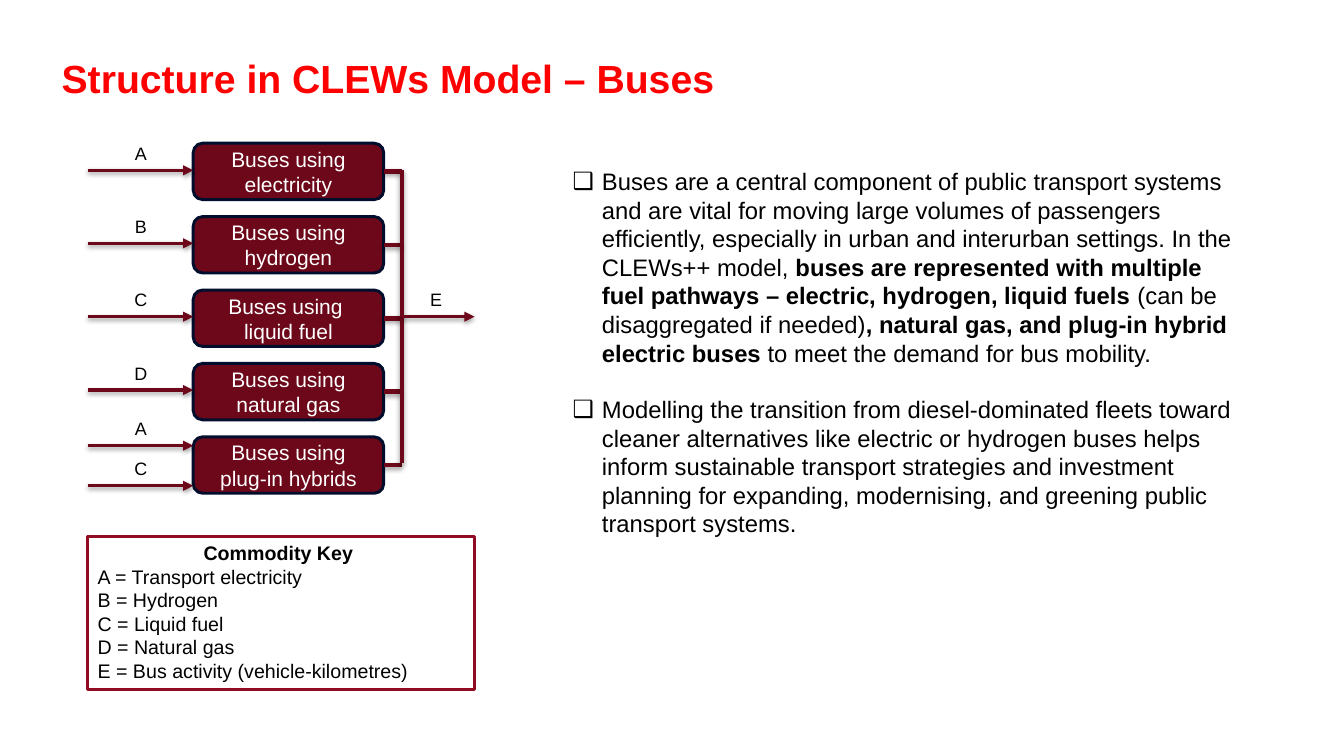
from dataclasses import dataclass

from lxml.etree import SubElement
from pptx import Presentation
from pptx.dml.color import RGBColor as Rgb
from pptx.enum.shapes import MSO_CONNECTOR as Link, MSO_SHAPE as Shape
from pptx.enum.text import MSO_ANCHOR as Anchor, MSO_AUTO_SIZE as Fit, PP_ALIGN as Align
from pptx.oxml import parse_xml
from pptx.oxml.ns import nsdecls, qn
from pptx.util import Cm, Pt


@dataclass(frozen=True)
class Theme:
    font: str = "Arial"
    red: Rgb = Rgb(0xFF, 0, 0)
    maroon: Rgb = Rgb(0x6C, 0x08, 0x19)
    crimson: Rgb = Rgb(0x91, 0x0C, 0x22)
    navy: Rgb = Rgb(0, 0x0D, 0x2C)
    black: Rgb = Rgb(0, 0, 0)
    white: Rgb = Rgb(0xFF, 0xFF, 0xFF)
    title: Pt = Pt(28)
    body: Pt = Pt(17)
    box: Pt = Pt(15)
    key: Pt = Pt(14)
    label: Pt = Pt(12.8)
    flow: Pt = Pt(2.41)
    bus_bar: Pt = Pt(3.21)


theme = Theme()


def write(paragraph, runs, size, color, align=Align.LEFT):
    paragraph.alignment = align
    for words, bold in runs:
        if words == "\n":
            paragraph.add_line_break()
            continue
        run = paragraph.add_run()
        run.text = words
        looks = {"name": theme.font, "size": size, "bold": bold}
        for attribute, value in looks.items():
            setattr(run.font, attribute, value)
        run.font.color.rgb = color


def draw_line(x1, y1, x2, y2, width, arrow=False):
    line = slide.shapes.add_connector(Link.STRAIGHT, Cm(x1), Cm(y1), Cm(x2), Cm(y2))
    line.line.color.rgb = theme.maroon
    line.line.width = width
    properties = line._element.spPr
    if arrow:
        SubElement(properties.find(qn("a:ln")), qn("a:tailEnd"), type="triangle")
    properties.append(parse_xml(
        f'<a:effectLst {nsdecls("a")}><a:outerShdw blurRad="43180" dist="21590" dir="5400000" '
        'rotWithShape="0"><a:srgbClr val="000000"><a:alpha val="37000"/></a:srgbClr>'
        '</a:outerShdw></a:effectLst>'))


deck = Presentation()
deck.slide_width, deck.slide_height = Cm(33.87), Cm(19.05)
slide = deck.slides.add_slide(deck.slide_layouts[5])

title = slide.shapes.title
title_place = {"left": Cm(1.3), "top": Cm(0.79), "width": Cm(32.26), "height": Cm(1.9)}
for attribute, value in title_place.items():
    setattr(title, attribute, value)
title_format = {"vertical_anchor": Anchor.BOTTOM, "word_wrap": True, "auto_size": Fit.NONE}
for attribute, value in title_format.items():
    setattr(title.text_frame, attribute, value)
heading = title.text_frame.paragraphs[0]
heading.line_spacing = 0.9
write(heading, [("Structure in CLEWs Model – Buses", True)], theme.title, theme.red)

points = [
    [("Buses are a central component of public transport systems and are vital for moving large "
      "volumes of passengers efficiently, especially in urban and interurban settings. In the "
      "CLEWs++ model, ", False),
     ("buses are represented with multiple fuel pathways – electric, hydrogen, liquid fuels ", True),
     ("(can be disaggregated if needed)", False),
     (", natural gas, and plug-in hybrid electric buses", True),
     (" to meet the demand for bus mobility.", False)],
    [("Modelling the transition from diesel-dominated fleets toward cleaner alternatives like "
      "electric or hydrogen buses helps inform sustainable transport strategies and investment "
      "planning for expanding, modernising, and greening public transport systems.", False)],
]
explanation = slide.shapes.add_textbox(Cm(14.18), Cm(4.08), Cm(17.27), Cm(9.7)).text_frame
explanation.word_wrap = True
explanation.auto_size = Fit.SHAPE_TO_FIT_TEXT
for number, point in enumerate(points):
    paragraph = explanation.add_paragraph() if number else explanation.paragraphs[0]
    layout = paragraph._p.get_or_add_pPr()
    layout.set("marL", str(Cm(0.74)))
    layout.set("indent", str(-Cm(0.74)))
    bullet_color = SubElement(layout, qn("a:buClr"))
    SubElement(bullet_color, qn("a:srgbClr"), val=str(theme.black))
    SubElement(layout, qn("a:buFont"), typeface=theme.font)
    SubElement(layout, qn("a:buChar"), char="❑")
    if number:
        paragraph.space_before = Pt(20)
    write(paragraph, point, theme.body, theme.black)

inlet, box_left, box_width, box_height = 2.21, 4.87, 4.8, 1.42
first_top, pitch = 3.61, 1.85
bar_x, outlet = 10.13, 11.96

fuels = ["electricity", "hydrogen", "liquid fuel", "natural gas", "plug-in hybrids"]
for row, fuel in enumerate(fuels):
    top = first_top + row * pitch
    box = slide.shapes.add_shape(
        Shape.ROUNDED_RECTANGLE, Cm(box_left), Cm(top), Cm(box_width), Cm(box_height))
    box.shadow.inherit = False
    box.fill.solid()
    box.fill.fore_color.rgb = theme.maroon
    box.line.color.rgb = theme.navy
    box.line.width = Pt(2.14)
    box.text_frame.word_wrap = True
    box.text_frame.vertical_anchor = Anchor.MIDDLE
    if fuel == "liquid fuel":
        caption = [("Buses using ", False), ("\n", False), (fuel, False)]
    else:
        caption = [(f"Buses using {fuel}", False)]
    write(box.text_frame.paragraphs[0], caption, theme.box, theme.white, Align.CENTER)
    center = top + box_height / 2
    draw_line(bar_x, center, box_left + box_width, center, theme.bus_bar)

draw_line(bar_x, 4.29, bar_x, 11.66, theme.bus_bar)

inputs = [(letter, inlet, y, box_left, 2.57) for letter, y in
          [("A", 4.29), ("B", 6.13), ("C", 7.98), ("D", 9.83), ("A", 11.23), ("C", 12.24)]]
for letter, start, y, end, label_left in inputs + [("E", bar_x, 7.98, outlet, 10.01)]:
    draw_line(start, y, end, y, theme.flow, arrow=True)
    label = slide.shapes.add_textbox(Cm(label_left), Cm(y - 0.83), Cm(1.96), Cm(0.81)).text_frame
    label.word_wrap = True
    label.auto_size = Fit.SHAPE_TO_FIT_TEXT
    write(label.paragraphs[0], [(letter, False)], theme.label, theme.black, Align.CENTER)

key = slide.shapes.add_shape(Shape.RECTANGLE, Cm(inlet), Cm(13.51), Cm(outlet - inlet), Cm(3.86))
key.shadow.inherit = False
key.fill.background()
key.line.color.rgb = theme.crimson
key.line.width = Pt(2.25)
key_format = {"word_wrap": True, "vertical_anchor": Anchor.TOP, "auto_size": Fit.SHAPE_TO_FIT_TEXT}
for attribute, value in key_format.items():
    setattr(key.text_frame, attribute, value)
write(key.text_frame.paragraphs[0], [("Commodity Key ", True)], theme.key, theme.black, Align.CENTER)
commodities = {"A": "Transport electricity", "B": "Hydrogen", "C": "Liquid fuel",
               "D": "Natural gas", "E": "Bus activity (vehicle-kilometres)"}
for letter, commodity in commodities.items():
    write(key.text_frame.add_paragraph(), [(f"{letter} = {commodity}", False)],
          theme.key, theme.black)

deck.save("out.pptx")
